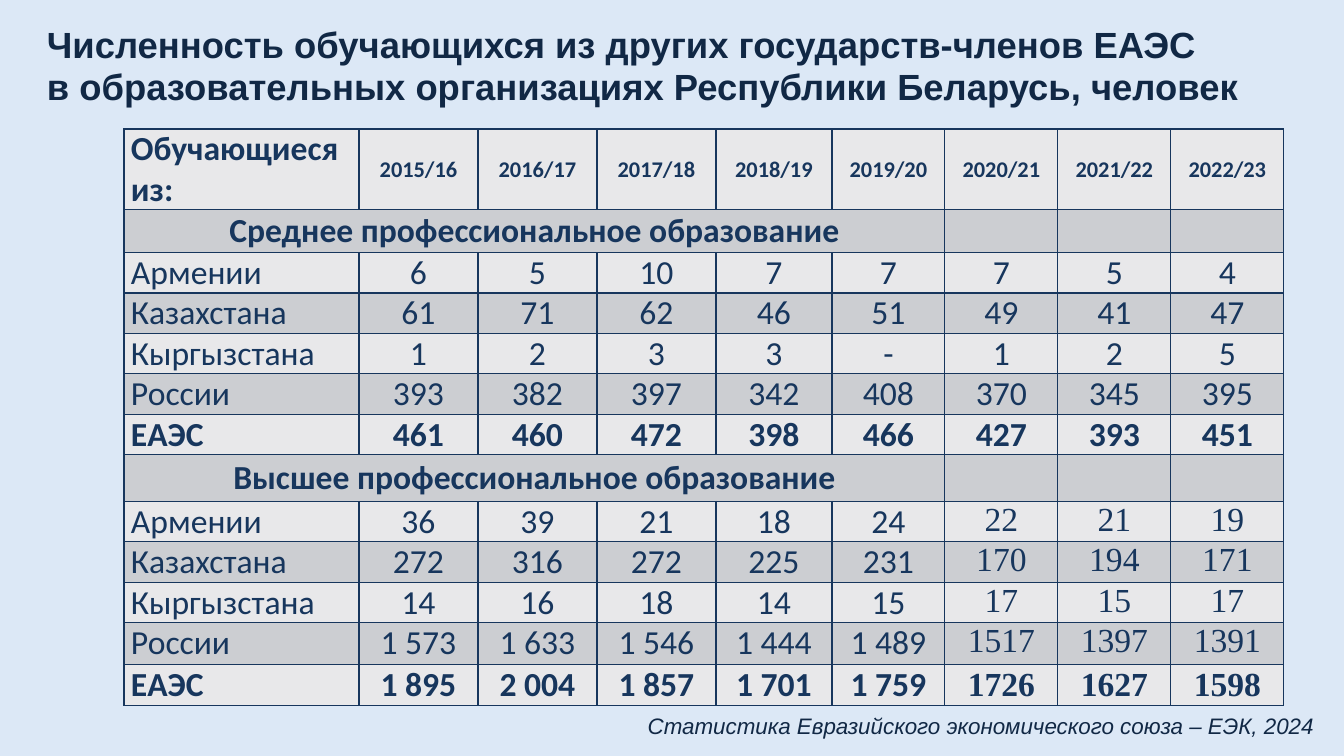
from lxml.etree import SubElement
from pptx import Presentation
from pptx.dml.color import RGBColor
from pptx.enum.text import MSO_ANCHOR as Anchor, MSO_AUTO_SIZE as AutoSize, PP_ALIGN as Align
from pptx.oxml.ns import qn
from pptx.util import Pt

TITLE = ("Численность обучающихся из других государств-членов ЕАЭС\v"
         "в образовательных организациях Республики Беларусь, человек")
SOURCE = "Статистика Евразийского экономического союза – ЕЭК, 2024"
HEADER = ["Обучающиеся из:", "2015/16", "2016/17", "2017/18", "2018/19",
          "2019/20", "2020/21", "2021/22", "2022/23"]
SECONDARY = [
    ["Среднее профессиональное образование"],
    ["Армении", "6", "5", "10", "7", "7", "7", "5", "4"],
    ["Казахстана", "61", "71", "62", "46", "51", "49", "41", "47"],
    ["Кыргызстана", "1", "2", "3", "3", "-", "1", "2", "5"],
    ["России", "393", "382", "397", "342", "408", "370", "345", "395"],
    ["ЕАЭС", "461", "460", "472", "398", "466", "427", "393", "451"],
]
HIGHER = [
    ["Высшее профессиональное образование"],
    ["Армении", "36", "39", "21", "18", "24", "22", "21", "19"],
    ["Казахстана", "272", "316", "272", "225", "231", "170", "194", "171"],
    ["Кыргызстана", "14", "16", "18", "14", "15", "17", "15", "17"],
    ["России", "1 573", "1 633", "1 546", "1 444", "1 489", "1517", "1397", "1391"],
    ["ЕАЭС", "1 895", "2 004", "1 857", "1 701", "1 759", "1726", "1627", "1598"],
]
ROWS = [HEADER] + SECONDARY + HIGHER
HIGHER_START = 1 + len(SECONDARY)
SECTION_SPAN = 6

COLUMN_WIDTHS = [235, 119, 119, 119, 116, 113, 113, 113, 113]
ROW_HEIGHTS = [61, 43, 36, 36, 36, 36, 38, 47, 36, 36, 36, 42, 41]
TABLE_LEFT, TABLE_TOP, TABLE_HEIGHT = 124, 129, 578
TEXT_LEFT, TEXT_WIDTH = 37, 1287

BACKGROUND = RGBColor(0xDC, 0xE8, 0xF6)
INK = RGBColor(0x11, 0x28, 0x45)
NAVY = RGBColor(0x17, 0x36, 0x5D)
LIGHT = RGBColor(0xE8, 0xE8, 0xEA)
GREY = RGBColor(0xCC, 0xCE, 0xD2)


def px(length):
    return round(length * 914400 / 100.8)


def style_font(font, name, size, color, bold=False, italic=False):
    font.name = name
    font.size = Pt(size)
    font.color.rgb = color
    font.bold = bold
    font.italic = italic


def add_text(slide, text, top, height, size, align, bold=False, italic=False):
    shape = slide.shapes.add_textbox(px(TEXT_LEFT), px(top), px(TEXT_WIDTH), px(height))
    frame = shape.text_frame
    frame.word_wrap = True
    frame.auto_size = AutoSize.SHAPE_TO_FIT_TEXT
    paragraph = frame.paragraphs[0]
    paragraph.text = text
    paragraph.alignment = align
    style_font(paragraph.font, "Arial", size, INK, bold, italic)
    return paragraph


def add_borders(cell):
    properties = cell._tc.get_or_add_tcPr()
    for position, side in enumerate(("a:lnL", "a:lnR", "a:lnT", "a:lnB")):
        line = SubElement(properties, qn(side), w=str(Pt(1)))
        SubElement(SubElement(line, qn("a:solidFill")), qn("a:srgbClr"), val=str(NAVY))
        properties.insert(position, line)


def fill_cell(cell, text, row, column):
    is_section = len(ROWS[row]) == 1
    is_strong = row == 0 or is_section or ROWS[row][0] == "ЕАЭС"
    cell.margin_left = cell.margin_right = px(7)
    cell.margin_top = cell.margin_bottom = 0
    cell.vertical_anchor = Anchor.MIDDLE if is_strong else Anchor.TOP
    paragraph = cell.text_frame.paragraphs[0]
    paragraph.text = text
    paragraph.alignment = Align.JUSTIFY if column == 0 and not is_section else Align.CENTER
    is_recent_higher = row > HIGHER_START and column >= SECTION_SPAN
    style_font(paragraph.font, "Times New Roman" if is_recent_higher else "Calibri",
               16 if row == 0 and column > 0 else 24, NAVY, is_strong)


def add_students_table(slide):
    shape = slide.shapes.add_table(len(ROWS), len(HEADER), px(TABLE_LEFT), px(TABLE_TOP),
                                   px(sum(COLUMN_WIDTHS)), px(TABLE_HEIGHT))
    table = shape.table
    table.first_row = table.horz_banding = False
    for column, width in zip(table.columns, COLUMN_WIDTHS):
        column.width = px(width)
    for row, height in zip(table.rows, ROW_HEIGHTS):
        row.height = px(height)
    shape.height = px(TABLE_HEIGHT)
    for row, values in enumerate(ROWS):
        for column in range(len(HEADER)):
            cell = table.cell(row, column)
            cell.fill.solid()
            cell.fill.fore_color.rgb = GREY if row % 2 else LIGHT
            add_borders(cell)
            if column < len(values):
                fill_cell(cell, values[column], row, column)
        if len(values) == 1:
            table.cell(row, 0).merge(table.cell(row, SECTION_SPAN - 1))


def main():
    presentation = Presentation()
    presentation.slide_width, presentation.slide_height = px(1344), px(756)
    slide = presentation.slides.add_slide(presentation.slide_layouts[6])
    slide.background.fill.solid()
    slide.background.fill.fore_color.rgb = BACKGROUND
    title = add_text(slide, TITLE, 19, 95, 26, Align.LEFT, bold=True)
    title.line_spacing = Pt(30)
    add_students_table(slide)
    add_text(slide, SOURCE, 707, 64, 16, Align.RIGHT, italic=True)
    presentation.save("out.pptx")


if __name__ == "__main__":
    main()
